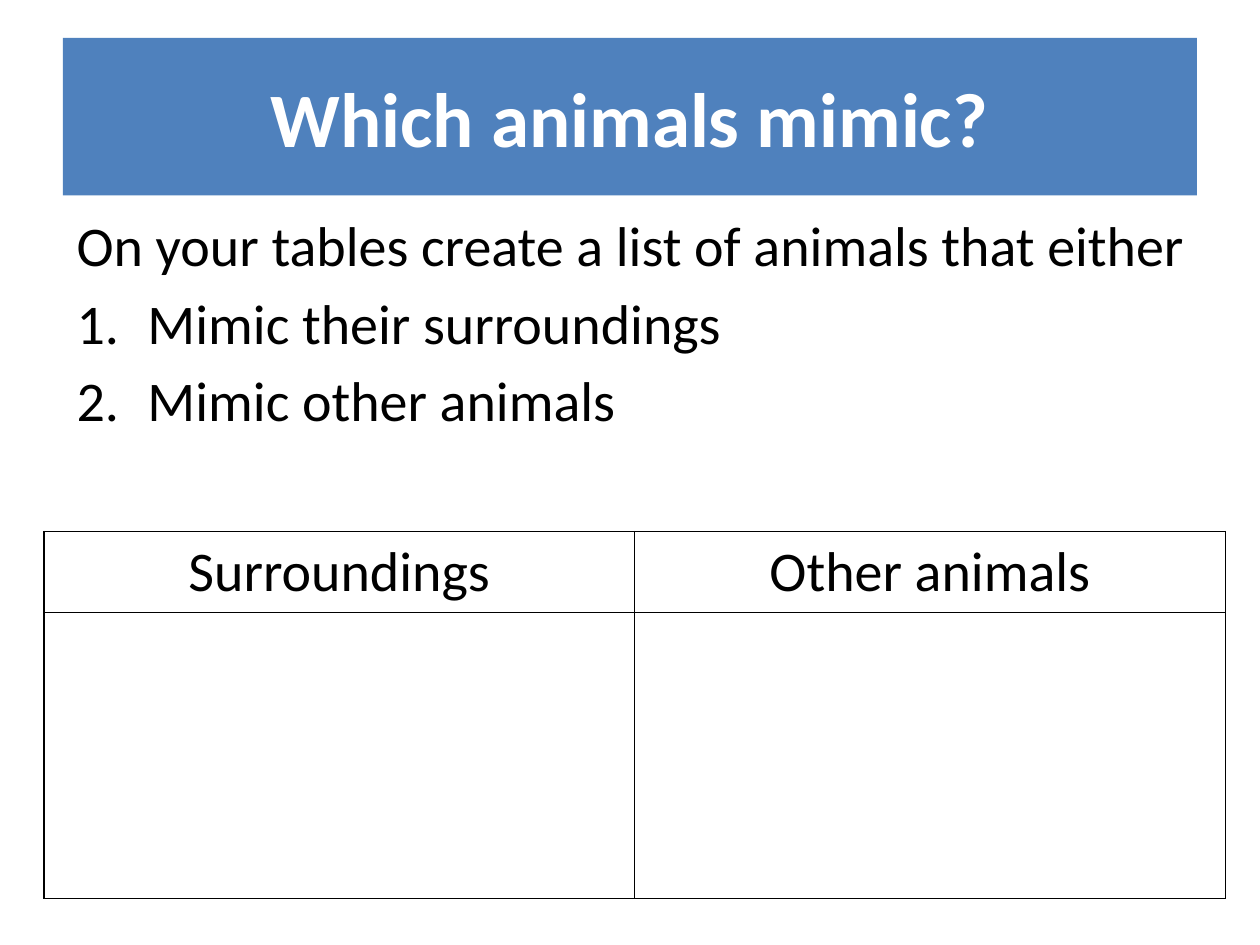
import pptx
import pptx.util
import pptx.dml.color
import pptx.enum.shapes
import pptx.enum.text
import pptx.oxml
from pptx.oxml.ns import qn

Pt = pptx.util.Pt
RGB = pptx.dml.color.RGBColor
ALIGN = pptx.enum.text.PP_ALIGN
ANCHOR = pptx.enum.text.MSO_ANCHOR

BLUE = RGB(0x4F, 0x81, 0xBD)
WHITE = RGB(0xFF, 0xFF, 0xFF)
BLACK = RGB(0, 0, 0)

TITLE = "Which animals mimic?"
INTRO = "On your tables create a list of animals that either"
TASKS = ["Mimic their surroundings", "Mimic other animals"]
HEADS = ["Surroundings", "Other animals"]

TITLE_BOX = (36, 21.6, 648, 90)
BODY_BOX = (36.72, 116.64, 648, 356.4)
GRID_AT = (25.2, 303.84)
COL = 337.5
ROWS = [46.25, 163.5]
INDENT = 40.5
TITLE_FONT = {"name": "Calibri", "size": Pt(44), "bold": True}
BODY_FONT = {"name": "Calibri", "size": Pt(32), "bold": False}


def write(para, text, style, color, align):
    para.alignment = align
    run = para.add_run()
    run.text = text
    for key, value in style.items():
        setattr(run.font, key, value)
    run.font.color.rgb = color


def number(para):
    """Give a paragraph a hanging indent and an automatic number."""
    props = para._p.get_or_add_pPr()
    props.set("marL", str(Pt(INDENT)))
    props.set("indent", str(-Pt(INDENT)))
    mark = props.makeelement(qn("a:buAutoNum"), {"type": "arabicPeriod"})
    props.append(mark)


def border(cell):
    props = cell._tc.get_or_add_tcPr()
    for at, side in enumerate(("lnL", "lnR", "lnT", "lnB")):
        line = pptx.oxml.parse_xml(
            f'<a:{side} xmlns:a="http://schemas.openxmlformats.org/drawingml/2006/main"'
            f' w="{Pt(1)}"><a:solidFill><a:srgbClr val="{BLACK}"/></a:solidFill></a:{side}>'
        )
        props.insert(at, line)


deck = pptx.Presentation()
deck.slide_width, deck.slide_height = Pt(720), Pt(540)
slide = deck.slides.add_slide(deck.slide_layouts[6])
shapes = slide.shapes

banner = shapes.add_shape(
    pptx.enum.shapes.MSO_SHAPE.RECTANGLE, *map(Pt, TITLE_BOX)
)
banner.shadow.inherit = False
banner.fill.solid()
banner.fill.fore_color.rgb = BLUE
banner.line.fill.background()
banner.text_frame.vertical_anchor = ANCHOR.MIDDLE
write(banner.text_frame.paragraphs[0], TITLE, TITLE_FONT, WHITE, ALIGN.CENTER)

frame = shapes.add_textbox(*map(Pt, BODY_BOX)).text_frame
frame.word_wrap = True
for at, text in enumerate([INTRO] + TASKS):
    para = frame.add_paragraph() if at else frame.paragraphs[0]
    para.space_before = Pt(6)
    write(para, text, BODY_FONT, BLACK, ALIGN.LEFT)
    if at:
        number(para)

table = shapes.add_table(
    len(ROWS), len(HEADS), *map(Pt, GRID_AT), Pt(COL * len(HEADS)), Pt(sum(ROWS))
).table
table.first_row = table.horz_banding = False
for row, height in zip(table.rows, ROWS):
    row.height = Pt(height)
for cell in table.iter_cells():
    cell.fill.background()
    border(cell)
for at, head in enumerate(HEADS):
    para = table.cell(0, at).text_frame.paragraphs[0]
    write(para, head, BODY_FONT, BLACK, ALIGN.CENTER)

deck.save("out.pptx")
